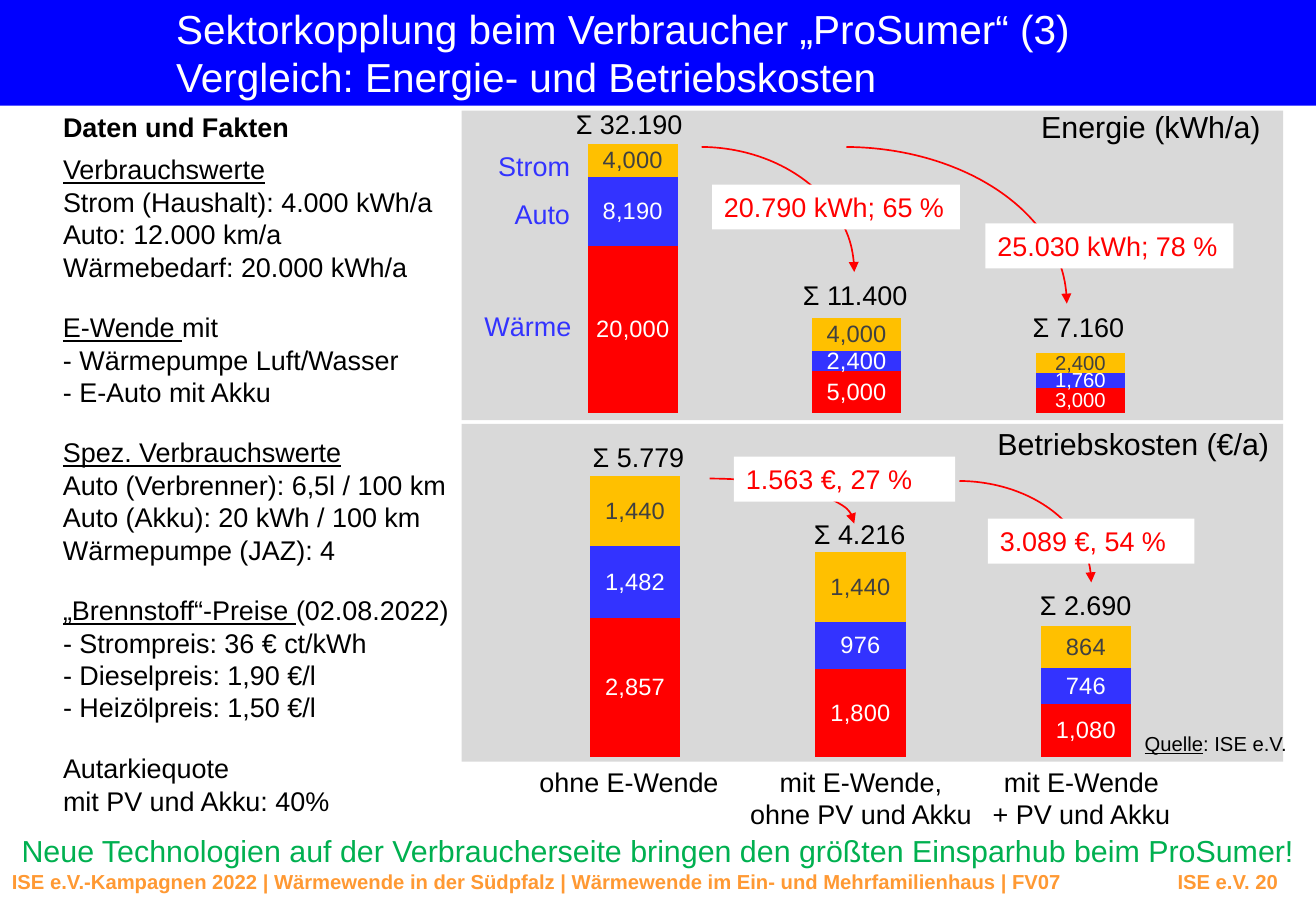
from dataclasses import dataclass

from lxml import etree
from pptx import Presentation
from pptx import util as u
from pptx.chart.data import CategoryChartData
from pptx.dml.color import RGBColor
from pptx.enum import chart as charts, shapes, text
from pptx.oxml import parse_xml
from pptx.oxml.ns import nsdecls, qn

FONT = "Arial"
BLACK = RGBColor(0x00, 0x00, 0x00)
WHITE = RGBColor(0xFF, 0xFF, 0xFF)
TITLE_BLUE = RGBColor(0x00, 0x00, 0xFF)
PANEL_GREY = RGBColor(0xD9, 0xD9, 0xD9)
LABEL_GREY = RGBColor(0x40, 0x40, 0x40)
HEAT_RED = RGBColor(0xFF, 0x00, 0x00)
CAR_BLUE = RGBColor(0x33, 0x33, 0xFF)
POWER_YELLOW = RGBColor(0xFF, 0xC0, 0x00)
CLAIM_GREEN = RGBColor(0x00, 0xB0, 0x50)
FOOTER_ORANGE = RGBColor(0xFF, 0x99, 0x33)

LEFT, CENTER, RIGHT = text.PP_ALIGN.LEFT, text.PP_ALIGN.CENTER, text.PP_ALIGN.RIGHT
# Fill and label colour of heat, car and power, from the bottom of a bar upwards
SECTORS = [(HEAT_RED, WHITE), (CAR_BLUE, WHITE), (POWER_YELLOW, LABEL_GREY)]


@dataclass
class Box:
    left: float
    top: float
    width: float
    height: float

    def lengths(self) -> list[u.Length]:
        return [u.Inches(v) for v in (self.left, self.top, self.width, self.height)]


@dataclass
class Label:
    box: Box
    body: str
    underlined: str = ""  # underlined beginning, before the body
    size: int = 16
    color: RGBColor = BLACK
    bold: bool = False
    align: text.PP_ALIGN = LEFT
    wrap: bool = False
    inset: tuple[float, float] = (0.1, 0.05)
    fill: RGBColor | None = None
    right_tab: float = 0


@dataclass
class Panel:
    background: Box
    chart: Box
    plot: tuple[float, float, float, float]
    maximum: int
    sectors: list[tuple[int, ...]]
    last_label_size: int


@dataclass
class Saving:
    arc: Box
    box: Box
    amount: str


PANELS = [
    Panel(Box(3.8, 3.49, 6.76, 2.78), Box(4.14, 3.17, 5.89, 3.06),
          (0.027, 0.086, 0.945, 0.914), 7000,
          [(2857, 1800, 1080), (1482, 976, 746), (1440, 1440, 864)], 14),
    Panel(Box(3.8, 0.91, 6.76, 2.55), Box(4.13, 0.99, 5.84, 2.47),
          (0.027, 0, 0.946, 0.977), 35000,
          [(20000, 5000, 3000), (8190, 2400, 1760), (4000, 4000, 2400)], 12),
]

LABELS = [
    # Title, closing claim and footer
    Label(Box(1.45, 0.03, 7.53, 0.81),
          "Sektorkopplung beim Verbraucher „ProSumer“ (3)\n"
          "Vergleich: Energie- und Betriebskosten",
          size=24, color=WHITE, inset=(0, 0)),
    Label(Box(0, 6.78, 10.83, 0.44),
          "Neue Technologien auf der Verbraucherseite bringen den größten "
          "Einsparhub beim ProSumer!",
          size=18, color=CLAIM_GREEN, align=CENTER, wrap=True, inset=(0.07, 0.07)),
    Label(Box(0, 7.11, 10.83, 0.3),
          "ISE e.V.-Kampagnen 2022 | Wärmewende in der Südpfalz | "
          "Wärmewende im Ein- und Mehrfamilienhaus | FV07\tISE e.V. 20",
          size=12, color=FOOTER_ORANGE, bold=True, wrap=True, right_tab=10.42),
    # Facts on the left
    Label(Box(0.42, 0.86, 2.08, 0.37), "Daten und Fakten", bold=True),
    Label(Box(0.42, 1.21, 3.29, 1.18),
          "\nStrom (Haushalt): 4.000 kWh/a\nAuto: 12.000 km/a\n"
          "Wärmebedarf: 20.000 kWh/a", "Verbrauchswerte"),
    Label(Box(0.42, 2.51, 3, 0.91),
          "mit\n- Wärmepumpe Luft/Wasser\n- E-Auto mit Akku", "E-Wende "),
    Label(Box(0.42, 3.54, 3.4, 1.18),
          "\nAuto (Verbrenner): 6,5l / 100 km\nAuto (Akku): 20 kWh / 100 km\n"
          "Wärmepumpe (JAZ): 4", "Spez. Verbrauchswerte"),
    Label(Box(0.42, 4.84, 3.42, 1.18),
          "(02.08.2022)\n- Strompreis: 36 € ct/kWh\n- Dieselpreis: 1,90 €/l\n"
          "- Heizölpreis: 1,50 €/l", "„Brennstoff“-Preise "),
    Label(Box(0.42, 6.14, 2.42, 0.64), "Autarkiequote\nmit PV und Akku: 40%"),
    # Panel headings, sums, sectors and scenarios
    Label(Box(8.47, 0.84, 2.03, 0.4), "Energie (kWh/a)", size=18),
    Label(Box(8.11, 3.45, 2.46, 0.4), "Betriebskosten (€/a)", size=18),
    Label(Box(4.64, 0.84, 1.08, 0.37), "Σ 32.190"),
    Label(Box(6.51, 2.24, 1.07, 0.37), "Σ 11.400"),
    Label(Box(8.4, 2.51, 0.96, 0.37), "Σ 7.160"),
    Label(Box(4.78, 3.58, 0.96, 0.37), "Σ 5.779"),
    Label(Box(6.6, 4.21, 0.96, 0.37), "Σ 4.216"),
    Label(Box(8.46, 4.8, 0.96, 0.37), "Σ 2.690"),
    Label(Box(3.99, 1.18, 0.8, 0.37), "Strom", color=CAR_BLUE, align=RIGHT),
    Label(Box(4.13, 1.58, 0.66, 0.37), "Auto", color=CAR_BLUE, align=RIGHT),
    Label(Box(3.87, 2.5, 0.93, 0.37), "Wärme", color=CAR_BLUE, align=RIGHT),
    Label(Box(4.34, 6.25, 1.69, 0.37), "ohne E-Wende"),
    Label(Box(6.06, 6.25, 2.05, 0.64), "mit E-Wende,\nohne PV und Akku", align=CENTER),
    Label(Box(8.06, 6.25, 1.68, 0.64), "mit E-Wende\n+ PV und Akku", align=CENTER),
    Label(Box(9.42, 6.02, 1.23, 0.2), ": ISE e.V.", "Quelle", size=12, inset=(0, 0)),
]

SAVINGS = [
    Saving(Box(4.49, 1.21, 2.54, 2.06), Box(5.86, 1.52, 2.04, 0.37), "20.790 kWh; 65 %"),
    Saving(Box(5.12, 1.21, 3.66, 2.58), Box(8.11, 1.84, 2.04, 0.37), "25.030 kWh; 78 %"),
    Saving(Box(4.64, 3.94, 2.39, 0.74), Box(6.04, 3.76, 1.82, 0.37), "1.563 €, 27 %"),
    Saving(Box(6.79, 3.96, 2.19, 1.67), Box(8.13, 4.27, 1.7, 0.37), "3.089 €, 54 %"),
]


def style(font, size: int, color: RGBColor, bold: bool = False) -> None:
    font.name, font.size, font.bold = FONT, u.Pt(size), bold
    font.color.rgb = color


def draw_area(slide, box: Box, color: RGBColor) -> None:
    area = slide.shapes.add_shape(shapes.MSO_SHAPE.RECTANGLE, *box.lengths())
    area.shadow.inherit = False
    area.fill.solid()
    area.fill.fore_color.rgb = color
    area.line.fill.background()


def draw_label(slide, label: Label) -> None:
    holder = slide.shapes.add_textbox(*label.box.lengths())
    if label.fill is not None:
        holder.fill.solid()
        holder.fill.fore_color.rgb = label.fill
    frame = holder.text_frame
    frame.word_wrap = label.wrap
    frame.auto_size = text.MSO_AUTO_SIZE.SHAPE_TO_FIT_TEXT
    frame.margin_left = frame.margin_right = u.Inches(label.inset[0])
    frame.margin_top = frame.margin_bottom = u.Inches(label.inset[1])
    paragraph = frame.paragraphs[0]
    paragraph.alignment = label.align
    if label.right_tab:
        tabs = etree.SubElement(paragraph._p.get_or_add_pPr(), qn("a:tabLst"))
        etree.SubElement(tabs, qn("a:tab"), pos=str(u.Inches(label.right_tab)), algn="r")
    style(paragraph.font, label.size, label.color, label.bold)
    if label.underlined:
        beginning = paragraph.add_run()
        beginning.text = label.underlined
        beginning.font.underline = True
    for number, line in enumerate(label.body.split("\n")):
        if number:
            paragraph.add_line_break()
        if line:
            paragraph.add_run().text = line


def draw_panel(slide, panel: Panel) -> None:
    draw_area(slide, panel.background, PANEL_GREY)
    data = CategoryChartData(number_format="#,##0")
    data.categories = ["1", "2", "3"]
    for number, values in enumerate(panel.sectors, 1):
        data.add_series(f"Series {number}", values)
    chart = slide.shapes.add_chart(
        charts.XL_CHART_TYPE.COLUMN_STACKED, *panel.chart.lengths(), data).chart
    chart.has_legend = chart.has_title = False
    style(chart.font, 10, BLACK)
    chart.value_axis.minimum_scale = 0
    chart.value_axis.maximum_scale = panel.maximum
    chart.value_axis.has_major_gridlines = False
    chart.value_axis.visible = chart.category_axis.visible = False

    # Bars and their values
    bars = chart.plots[0]
    bars.vary_by_categories = False
    bars.gap_width, bars.overlap = 150, 100
    for sector, (fill, label_color) in zip(bars.series, SECTORS):
        sector.format.fill.solid()
        sector.format.fill.fore_color.rgb = fill
        values = sector.data_labels
        values.show_value = True
        values.number_format, values.number_format_is_linked = "#,##0", False
        style(values.font, 14, label_color)
        if panel.last_label_size != 14:
            style(sector.points[2].data_label.font, panel.last_label_size, label_color)

    # Fixed place of the plot inside the chart
    places = "".join(f'<c:{tag} val="{value}"/>' for tag, value in zip("xywh", panel.plot))
    layout = parse_xml(
        f'<c:layout {nsdecls("c")}><c:manualLayout><c:layoutTarget val="inner"/>'
        f'<c:xMode val="edge"/><c:yMode val="edge"/>{places}</c:manualLayout></c:layout>')
    plot_area = chart._chartSpace.chart.plotArea
    for automatic in plot_area.findall(qn("c:layout")):
        plot_area.remove(automatic)
    plot_area.insert(0, layout)


def draw_saving(slide, saving: Saving) -> None:
    arc = slide.shapes.add_shape(shapes.MSO_SHAPE.ARC, *saving.arc.lengths())
    arc.shadow.inherit = False
    arc.adjustments[0], arc.adjustments[1] = 162.45, 0
    arc.fill.background()
    arc.line.color.rgb = HEAT_RED
    arc.line.width = u.Pt(1)
    etree.SubElement(arc.line._get_or_add_ln(), qn("a:tailEnd"), type="triangle")
    draw_label(slide, Label(saving.box, saving.amount, color=HEAT_RED, wrap=True, fill=WHITE))


def main() -> None:
    deck = Presentation()
    deck.slide_width, deck.slide_height = u.Inches(10.83), u.Inches(7.5)
    slide = deck.slides.add_slide(deck.slide_layouts[6])
    draw_area(slide, Box(0, 0, 10.83, 0.87), TITLE_BLUE)
    for panel in PANELS:
        draw_panel(slide, panel)
    for label in LABELS:
        draw_label(slide, label)
    for saving in SAVINGS:
        draw_saving(slide, saving)
    deck.save("out.pptx")


if __name__ == "__main__":
    main()
